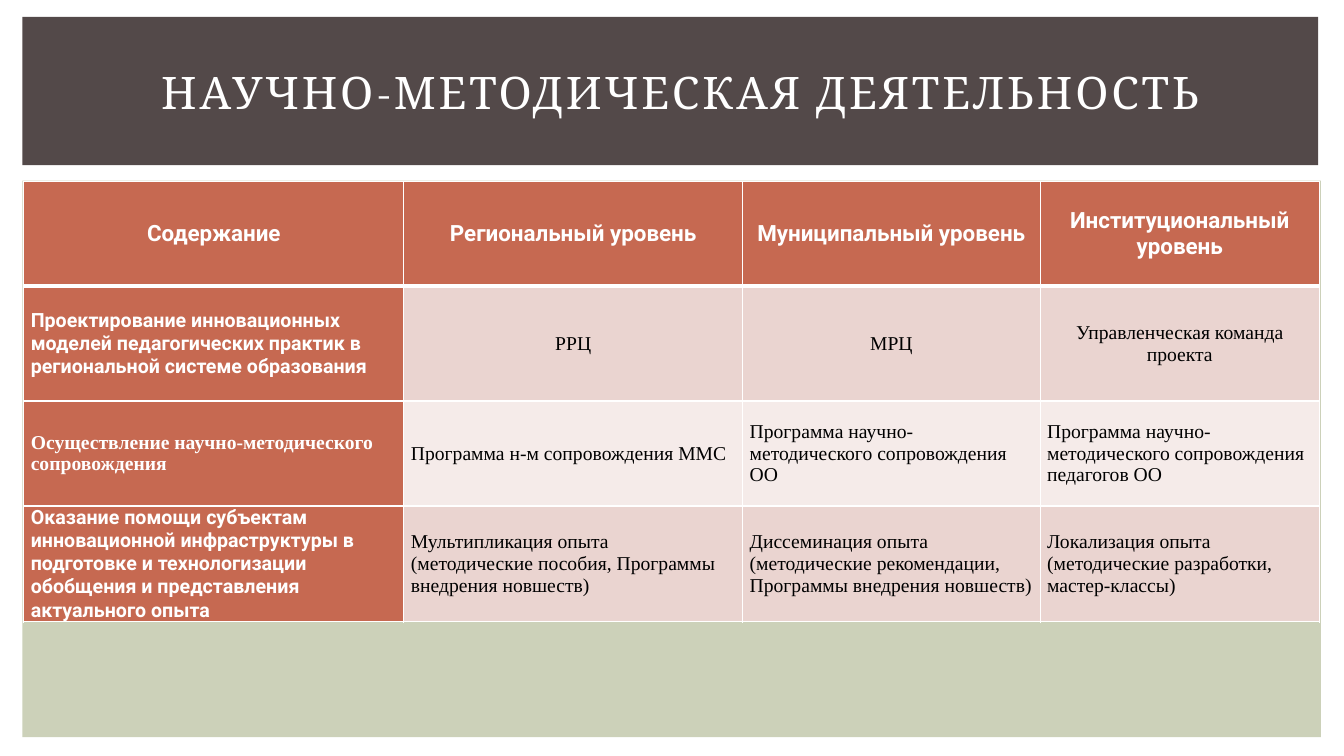
"""Build a slide with a table of scientific and methodological work by level."""
from lxml.etree import SubElement
from pptx import Presentation
from pptx.dml.color import RGBColor
from pptx.enum.shapes import MSO_SHAPE
from pptx.enum.text import MSO_ANCHOR, MSO_AUTO_SIZE, PP_ALIGN
from pptx.oxml.ns import qn
from pptx.util import Pt

TITLE = "НАУЧНО-МЕТОДИЧЕСКАЯ ДЕЯТЕЛЬНОСТЬ"
ROWS = [
    ["Содержание", "Региональный уровень", "Муниципальный уровень",
     "Институциональный уровень"],
    ["Проектирование инновационных моделей педагогических практик в "
     "региональной системе образования",
     "РРЦ", "МРЦ", "Управленческая команда проекта"],
    ["Осуществление научно-методического сопровождения",
     "Программа н-м сопровождения ММС",
     "Программа научно-методического сопровождения ОО",
     "Программа научно-методического сопровождения педагогов ОО"],
    ["Оказание помощи субъектам инновационной инфраструктуры в подготовке и "
     "технологизации обобщения и представления актуального опыта",
     "Мультипликация опыта\v(методические пособия, Программы внедрения новшеств)",
     "Диссеминация опыта\n(методические рекомендации, Программы внедрения новшеств)",
     "Локализация опыта\n(методические разработки, мастер-классы)"],
]
COL_WIDTHS = [271.5, 242, 212.5, 199.5]
ROW_HEIGHTS = [75, 82, 75, 82]
PANELS = [
    ((16, 129, 927.5, 397.5), "CCD1B9"),
    ((16, 12, 925.5, 106), "534949"),
]
WHITE, BLACK, ACCENT = "FFFFFF", "000000", "C66951"
BANDS = ["F5EBE9", "EAD4D0"]
SERIF_ROW = 2


def color(value):
    return RGBColor.from_string(value)


def set_font(p, name, size, value, bold=False):
    p.font.name, p.font.size, p.font.bold = name, Pt(size), bold
    p.font.color.rgb = color(value)


def set_borders(cell, row):
    widths = {"L": 1, "R": 1, "T": 3 if row == 1 else 1, "B": 3 if row == 0 else 1}
    tcPr = cell._tc.get_or_add_tcPr()
    for side, width in widths.items():
        ln = SubElement(tcPr, qn(f"a:ln{side}"), w=str(Pt(width)))
        fill = SubElement(ln, qn("a:solidFill"))
        SubElement(fill, qn("a:srgbClr"), val=WHITE)


def format_cell(cell, text, row, col):
    header = row == 0
    strong = header or col == 0
    set_borders(cell, row)
    cell.fill.solid()
    cell.fill.fore_color.rgb = color(ACCENT if strong else BANDS[row % 2])
    cell.vertical_anchor = MSO_ANCHOR.MIDDLE
    cell.margin_left = cell.margin_right = Pt(4.5 if header else 5)
    cell.margin_top = cell.margin_bottom = 0
    cell.text = text
    roboto = strong and row != SERIF_ROW
    centred = header or (row == 1 and col > 0)
    for p in cell.text_frame.paragraphs:
        p.alignment = PP_ALIGN.CENTER if centred else PP_ALIGN.LEFT
        set_font(p, "Roboto" if roboto else "Times New Roman",
                 16 if header else 14, WHITE if strong else BLACK, strong)


def add_panel(s, box, value):
    sp = s.shapes.add_shape(MSO_SHAPE.RECTANGLE, *map(Pt, box))
    sp.shadow.inherit = False
    sp.fill.solid()
    sp.fill.fore_color.rgb = color(value)
    sp.line.fill.background()


def add_levels_table(s):
    frame = s.shapes.add_table(len(ROWS), len(COL_WIDTHS), Pt(17), Pt(129.5),
                               Pt(sum(COL_WIDTHS)), Pt(sum(ROW_HEIGHTS)))
    table = frame.table
    for column, width in zip(table.columns, COL_WIDTHS):
        column.width = Pt(width)
    for row, height in zip(table.rows, ROW_HEIGHTS):
        row.height = Pt(height)
    for i, texts in enumerate(ROWS):
        for j, text in enumerate(texts):
            format_cell(table.cell(i, j), text, i, j)


def format_title(s):
    sp = s.shapes.title
    sp.left, sp.top, sp.width, sp.height = map(Pt, (52.5, 28, 867.5, 75.5))
    tf = sp.text_frame
    tf.text = TITLE
    tf.word_wrap = True
    tf.auto_size = MSO_AUTO_SIZE.NONE
    tf.vertical_anchor = MSO_ANCHOR.MIDDLE
    p = tf.paragraphs[0]
    p.alignment = PP_ALIGN.CENTER
    set_font(p, "Cambria", 32, WHITE)
    p.runs[0].font._element.set("spc", "200")
    s.shapes.element.append(sp.element)


def main():
    prs = Presentation()
    prs.slide_width, prs.slide_height = Pt(960), Pt(540)
    s = prs.slides.add_slide(prs.slide_layouts[5])
    for box, value in PANELS:
        add_panel(s, box, value)
    add_levels_table(s)
    format_title(s)
    prs.save("out.pptx")


if __name__ == "__main__":
    main()
